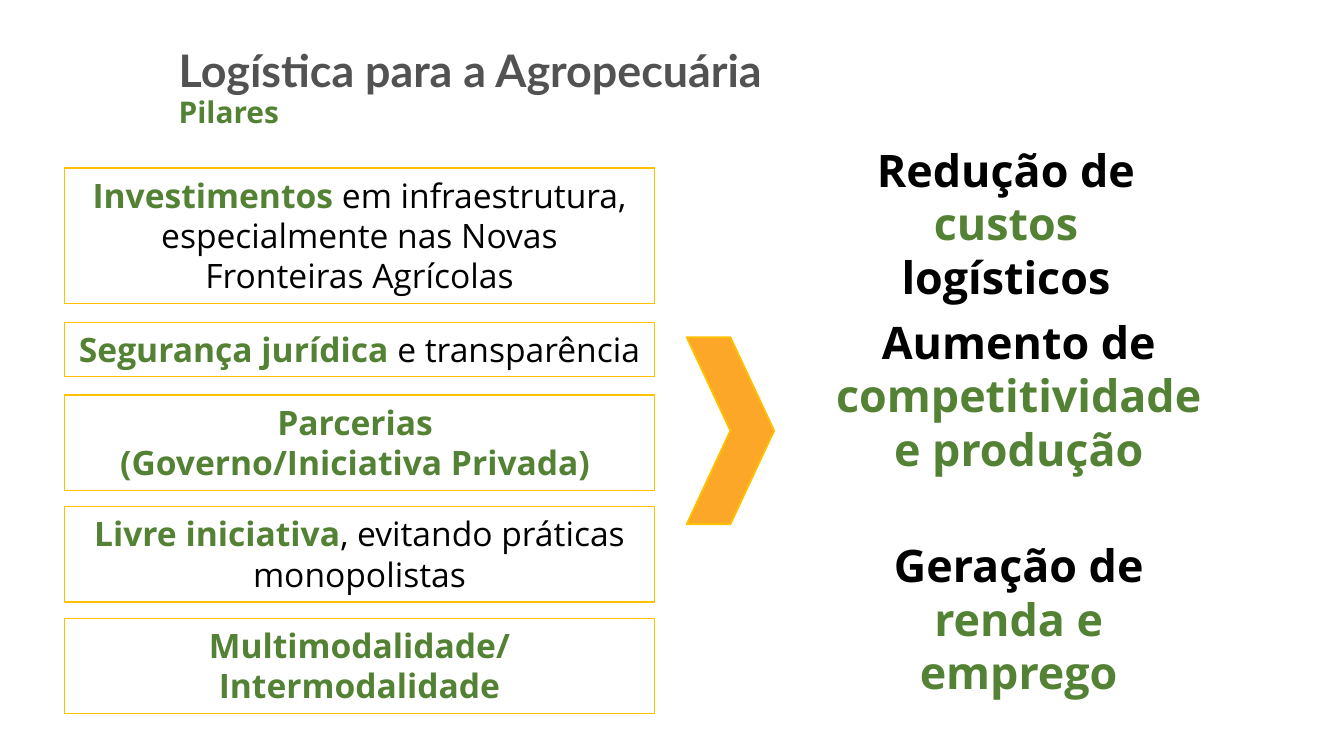
import pptx
import pptx.util
import pptx.dml.color
import pptx.enum.shapes
import pptx.enum.text

Inches = pptx.util.Inches
Pt = pptx.util.Pt

COLORS = {
    "heading": "525252",
    "green": "548235",
    "black": "000000",
    "border": "FFC000",
    "arrow": "FDA728",
}


class PillarSlide:
    heading_font = "Lato"
    body_font = "Open Sans"

    def __init__(self, presentation):
        self.slide = presentation.slides.add_slide(presentation.slide_layouts[5])

    def color(self, name):
        return pptx.dml.color.RGBColor.from_string(COLORS[name])

    def place(self, shape, left, top, width, height):
        shape.left, shape.top = Inches(left), Inches(top)
        shape.width, shape.height = Inches(width), Inches(height)

    def frame(self, shape, anchor):
        frame = shape.text_frame
        frame.word_wrap = True
        frame.auto_size = pptx.enum.text.MSO_AUTO_SIZE.SHAPE_TO_FIT_TEXT
        frame.vertical_anchor = anchor
        return frame

    def paragraph(self, paragraph, parts, size, font_name, align):
        paragraph.alignment = align
        paragraph.font.name = font_name
        paragraph.font.size = Pt(size)
        for text, color, bold in parts:
            run = paragraph.add_run()
            run.text = text
            font = paragraph.font if len(parts) == 1 else run.font
            font.bold = bold
            font.color.rgb = self.color(color)

    def fill_text(self, shape, paragraphs, size):
        frame = self.frame(shape, pptx.enum.text.MSO_ANCHOR.TOP)
        for index, parts in enumerate(paragraphs):
            paragraph = frame.add_paragraph() if index else frame.paragraphs[0]
            self.paragraph(paragraph, parts, size, self.body_font,
                           pptx.enum.text.PP_ALIGN.CENTER)

    def title(self, heading, subtitle, *box):
        title = self.slide.shapes.title
        self.place(title, *box)
        frame = self.frame(title, pptx.enum.text.MSO_ANCHOR.MIDDLE)
        left = pptx.enum.text.PP_ALIGN.LEFT
        self.paragraph(frame.paragraphs[0], [(heading, "heading", True)],
                       24, self.heading_font, left)
        self.paragraph(frame.add_paragraph(), [(subtitle, "green", True)],
                       16, self.body_font, left)
        for paragraph in frame.paragraphs:
            paragraph.line_spacing = 0.9

    def shape(self, kind, box, line_width, fill=None):
        shape = self.slide.shapes.add_shape(kind, *map(Inches, box))
        shape.shadow.inherit = False
        if fill:
            shape.fill.solid()
            shape.fill.fore_color.rgb = self.color(fill)
        else:
            shape.fill.background()
        shape.line.color.rgb = self.color("border")
        shape.line.width = Pt(line_width)
        return shape

    def pillar(self, paragraphs, *box):
        pillar = self.shape(pptx.enum.shapes.MSO_SHAPE.RECTANGLE, box, 0.75)
        self.fill_text(pillar, paragraphs, 18)

    def outcome(self, parts, *box):
        outcome = self.slide.shapes.add_textbox(*map(Inches, box))
        self.fill_text(outcome, [[(text, color, True) for text, color in parts]], 24)

    def chevron(self, *box):
        self.shape(pptx.enum.shapes.MSO_SHAPE.CHEVRON, box, 1, "arrow")


def main():
    presentation = pptx.Presentation()
    presentation.slide_width = Inches(10)
    presentation.slide_height = Inches(10 * 9 / 16)
    page = PillarSlide(presentation)

    page.title("Logística para a Agropecuária", "Pilares", 1.23, 0.31, 5.38, 0.71)

    pillars = [
        (1.25, 1.01, [[("Investimentos", "green", True),
                       (" em infraestrutura, especialmente nas Novas Fronteiras Agrícolas",
                        "black", False)]]),
        (2.4, 0.4, [[("Segurança jurídica ", "green", True),
                     ("e transparência", "black", False)]]),
        (2.94, 0.71, [[("Parcerias ", "green", True)],
                      [("(Governo/Iniciativa Privada) ", "green", True)]]),
        (3.77, 0.71, [[("Livre iniciativa", "green", True),
                       (", evitando práticas monopolistas", "black", False)]]),
        (4.6, 0.71, [[("Multimodalidade/", "green", True)],
                     [("Intermodalidade", "green", True)]]),
    ]
    for top, height, paragraphs in pillars:
        page.pillar(paragraphs, 0.48, top, 4.39, height)

    page.chevron(5.11, 2.51, 0.65, 1.39)

    page.outcome([("Redução de ", "black"), ("custos", "green"),
                  (" logísticos", "black")], 6.2, 1.01, 2.57, 0.91)
    page.outcome([("Aumento de ", "black"),
                  ("competitividade e produção", "green")], 5.99, 2.29, 3.18, 1.31)
    page.outcome([("Geração de ", "black"),
                  ("renda e emprego", "green")], 6.51, 3.95, 2.14, 1.31)

    presentation.save("out.pptx")


if __name__ == "__main__":
    main()
